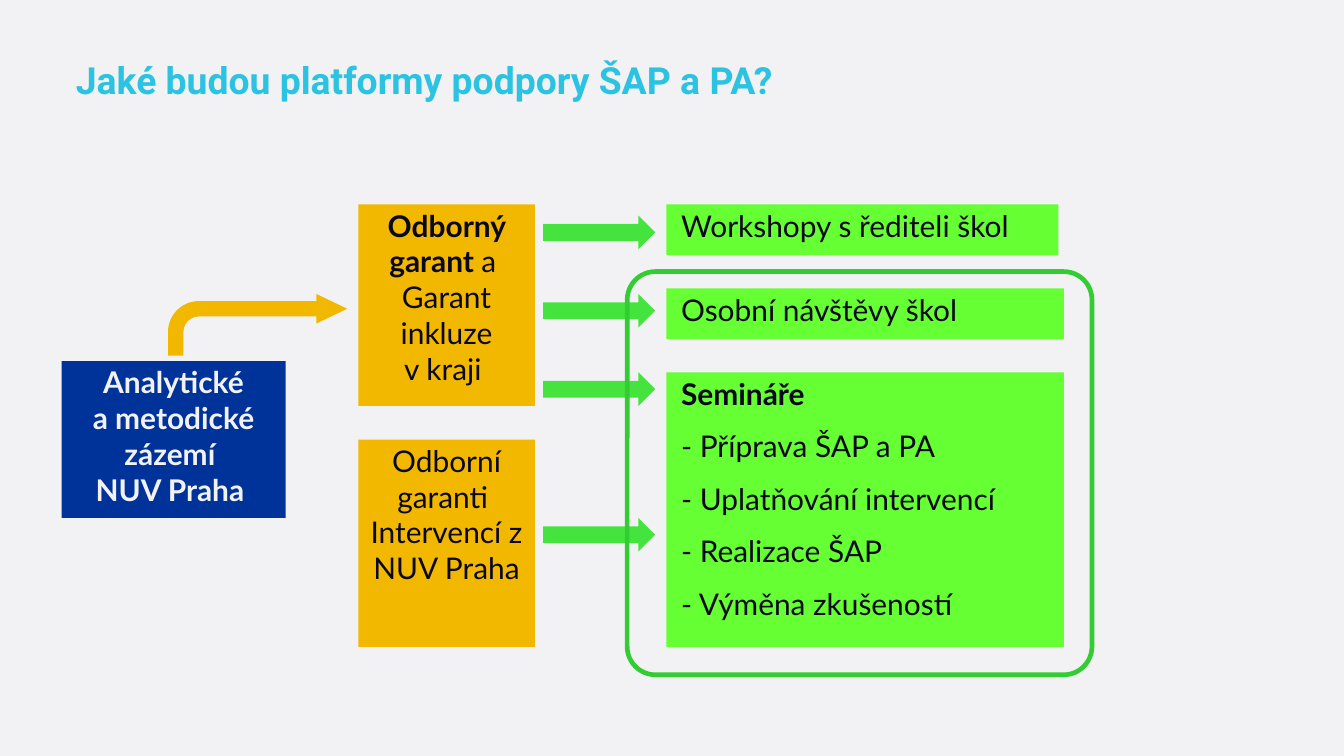
"""Builds the slide on support platforms for ŠAP and PA."""
from pptx import Presentation
from pptx.dml.color import RGBColor
from pptx.enum.shapes import MSO_SHAPE as Shape
from pptx.enum.text import MSO_ANCHOR as Anchor, PP_ALIGN as Align
from pptx.util import Pt

PX = 9525
BACKGROUND = RGBColor(0xF2, 0xF2, 0xF5)
TITLE = RGBColor(0x2B, 0xC3, 0xE1)
INK = RGBColor(0x0A, 0x09, 0x1B)
NAVY = RGBColor(0x00, 0x33, 0x99)
AMBER = RGBColor(0xF2, 0xB8, 0x00)
LIME = RGBColor(0x66, 0xFF, 0x33)
ARROW = RGBColor(0x45, 0xE3, 0x3D)
FRAME = RGBColor(0x33, 0xCC, 0x33)

prs = Presentation()
prs.slide_width, prs.slide_height = 1920 * PX, 1080 * PX
slide = prs.slides.add_slide(prs.slide_layouts[6])
slide.background.fill.solid()
slide.background.fill.fore_color.rgb = BACKGROUND


def add_filled(kind, box, color):
    shape = slide.shapes.add_shape(kind, *(n * PX for n in box))
    shape.shadow.inherit = False
    shape.fill.solid()
    shape.fill.fore_color.rgb = color
    shape.line.fill.background()
    return shape


def add_run(paragraph, text, size, face, color, bold):
    run = paragraph.add_run()
    run.text = text
    run.font.color.rgb = color
    for key, value in {"size": Pt(size), "name": face, "bold": bold}.items():
        setattr(run.font, key, value)


heading = slide.shapes.add_textbox(99 * PX, 84 * PX, 1733 * PX, 68 * PX).text_frame
heading.word_wrap = True
heading.vertical_anchor = Anchor.MIDDLE
heading.paragraphs[0].line_spacing = 0.9
add_run(heading.paragraphs[0], "Jaké budou platformy podpory ŠAP a PA?", 40, "Roboto", TITLE, True)

panels = [
    ((88, 516, 320, 224), NAVY, BACKGROUND, Align.CENTER, 0,
     [[("Analytické", True)], [("a metodické zázemí ", True)], [("NUV Praha ", True)]]),
    ((512, 292, 252, 288), AMBER, INK, Align.CENTER, 0,
     [[("Odborný garant ", True), ("a ", False)], [("Garant inkluze", False)], [("v kraji ", False)]]),
    ((512, 628, 252, 296), AMBER, INK, Align.CENTER, 0,
     [[("Odborní garanti ", False)], [("Intervencí z NUV Praha", False)]]),
    ((952, 292, 560, 72), LIME, INK, Align.LEFT, 21, [[("Workshopy s řediteli škol", False)]]),
    ((952, 412, 568, 72), LIME, INK, Align.LEFT, 21, [[("Osobní návštěvy škol", False)]]),
    ((952, 532, 568, 392), LIME, INK, Align.LEFT, 21,
     [[("Semináře", True)], [("- Příprava ŠAP a PA", False)], [("- Uplatňování intervencí", False)],
      [("- Realizace ŠAP", False)], [("- Výměna zkušeností", False)]]),
]
for box, fill, ink, align, indent, lines in panels:
    frame = add_filled(Shape.RECTANGLE, box, fill).text_frame
    layout = {"word_wrap": True, "vertical_anchor": Anchor.TOP, "margin_left": indent * PX,
              "margin_top": 4 * PX, "margin_right": 0, "margin_bottom": PX}
    for key, value in layout.items():
        setattr(frame, key, value)
    for index, line in enumerate(lines):
        paragraph = frame.add_paragraph() if index else frame.paragraphs[0]
        paragraph.alignment = align
        if index and align == Align.LEFT:
            paragraph.space_before = Pt(18)
        for text, bold in line:
            add_run(paragraph, text, 32, "Lato", ink, bold)

for top in (308, 420, 532, 740):
    add_filled(Shape.RIGHT_ARROW, (776, top, 160, 48), ARROW)

support_arrow = add_filled(Shape.BENT_ARROW, (240, 420, 256, 88), AMBER)
for index, value in enumerate((0.25, 0.24, 0.5, 0.5)):
    support_arrow.adjustments[index] = value

school_frame = add_filled(Shape.ROUNDED_RECTANGLE, (896, 388, 664, 576), FRAME)
school_frame.adjustments[0] = 0.07
school_frame.fill.background()
school_frame.line.color.rgb = FRAME
school_frame.line.width = Pt(5)

prs.save("out.pptx")
